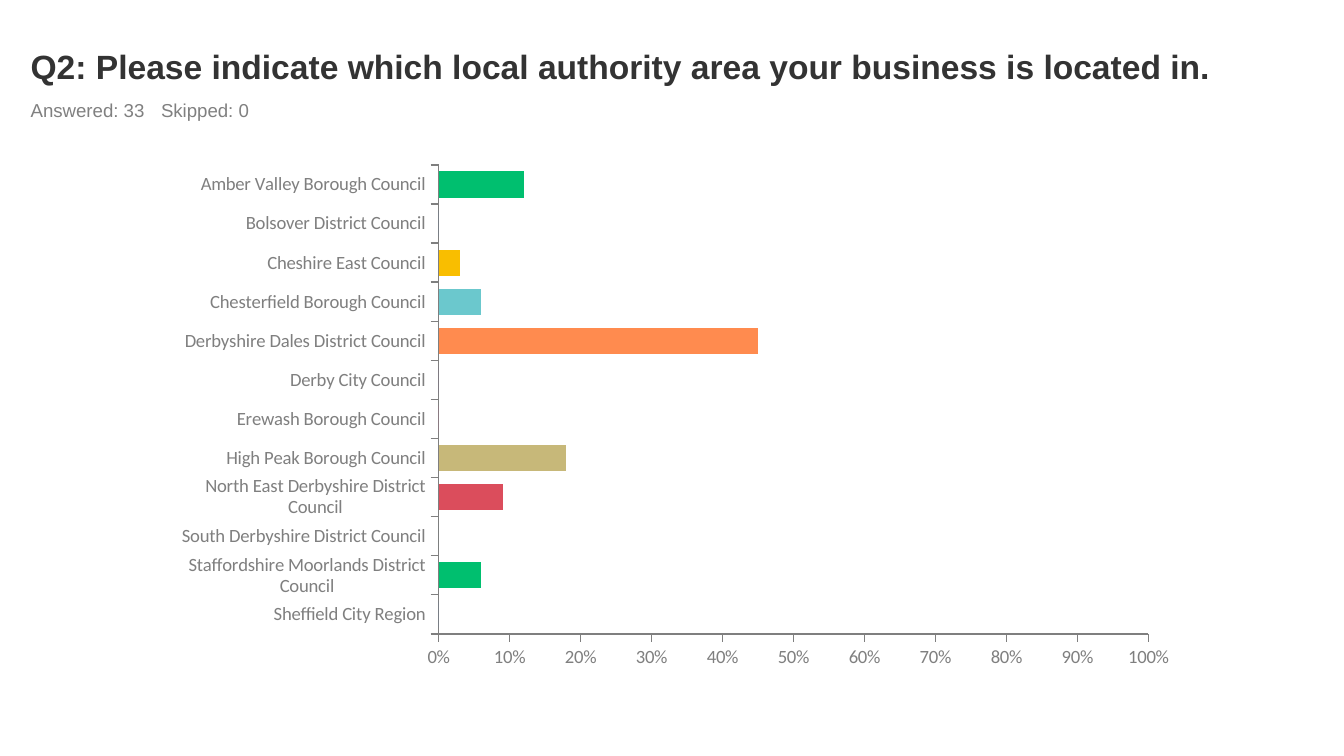
from dataclasses import dataclass
from itertools import cycle

from lxml.etree import SubElement
from pptx import Presentation
from pptx.chart.data import CategoryChartData
from pptx.dml.color import RGBColor
from pptx.enum.chart import XL_CHART_TYPE as ChartType
from pptx.enum.chart import XL_TICK_LABEL_POSITION as LabelPosition
from pptx.enum.chart import XL_TICK_MARK as TickMark
from pptx.enum.text import MSO_ANCHOR as Anchor
from pptx.oxml.ns import qn
from pptx.util import Inches, Pt

WIDTH = Inches(10)
HEIGHT = WIDTH * 9 // 16
DARK, GREY, AXIS_GREY = "333333", "808080", "7F7F7F"
PALETTE = ["00BF6F", "507CB6", "F9BE00", "6BC8CD", "FF8B4F",
           "7D5E90", "D25F90", "C7B879", "DB4D5C", "768086"]
SHARES = {
    "Amber Valley Borough Council": 0.12,
    "Bolsover District Council": 0,
    "Cheshire East Council": 0.03,
    "Chesterfield Borough Council": 0.06,
    "Derbyshire Dales District Council": 0.45,
    "Derby City Council": 0,
    "Erewash Borough Council": 0,
    "High Peak Borough Council": 0.18,
    "North East Derbyshire District Council": 0.09,
    "South Derbyshire District Council": 0,
    "Staffordshire Moorlands District Council": 0.06,
    "Sheffield City Region": 0,
}


@dataclass(frozen=True)
class Box:
    """A rectangle in inches on the slide."""
    left: float
    top: float
    width: float
    height: float

    def lengths(self) -> tuple:
        """Return the four lengths for a new shape."""
        return tuple(Inches(n) for n in (self.left, self.top, self.width, self.height))


@dataclass(frozen=True)
class Heading:
    """A line of text above the chart."""
    text: str
    box: Box
    size: float
    color: str
    bold: bool = False
    anchor: Anchor = Anchor.TOP
    space_before: float = 0
    tab: float = 0


HEADINGS = [
    Heading("Q2: Please indicate which local authority area your business is located in.",
            Box(0.13, 0.09, 9, 0.6), 18, DARK, True, Anchor.BOTTOM),
    Heading("Answered: 33\tSkipped: 0", Box(0.13, 0.69, 9, 0.26), 10, GREY,
            space_before=2, tab=0.97),
]
CHART_BOX = Box(1.2, 1.15, 7.65, 3.9)


def rgb(color: str) -> RGBColor:
    """Turn a hex string into a colour."""
    return RGBColor.from_string(color)


def style_font(font, name: str, size: float, color: str, bold: bool = False) -> None:
    """Set the look of a font."""
    font.name, font.size, font.bold = name, Pt(size), bold
    font.color.rgb = rgb(color)


def add_heading(slide, heading: Heading) -> None:
    """Draw one heading."""
    text_frame = slide.shapes.add_textbox(*heading.box.lengths()).text_frame
    text_frame.word_wrap = True
    text_frame.vertical_anchor = heading.anchor
    text_frame.text = heading.text
    paragraph = text_frame.paragraphs[0]
    paragraph.space_before = Pt(heading.space_before)
    if heading.tab:
        tabs = SubElement(paragraph._p.get_or_add_pPr(), qn("a:tabLst"))
        SubElement(tabs, qn("a:tab"), pos=str(Inches(heading.tab)), algn="l")
    for run in paragraph.runs:
        style_font(run.font, "Arial", heading.size, heading.color, heading.bold)


def style_axis(axis, label_position: LabelPosition) -> None:
    """Give an axis its line, ticks and labels."""
    axis.has_major_gridlines = False
    axis.major_tick_mark = TickMark.OUTSIDE
    axis.minor_tick_mark = TickMark.NONE
    axis.tick_label_position = label_position
    axis.format.line.color.rgb = rgb(AXIS_GREY)
    axis.format.line.width = Pt(0.75)
    style_font(axis.tick_labels.font, "Calibri", 10, AXIS_GREY)


def move_to_last_category(value_axis) -> None:
    """Let the value axis cross after the last category."""
    element = value_axis._element
    element.find(qn("c:axPos")).set("val", "t")
    element.find(qn("c:crosses")).set("val", "max")


def add_share_chart(slide, box: Box, shares: dict[str, float]) -> None:
    """Draw the bar chart of answers by local authority."""
    data = CategoryChartData(number_format="0%")
    data.categories = list(shares)
    data.add_series("Series 1", list(shares.values()))
    chart = slide.shapes.add_chart(ChartType.BAR_CLUSTERED, *box.lengths(), data).chart
    chart.has_legend = False
    chart.has_title = False
    style_font(chart.font, "Calibri", 18, DARK)

    categories, values = chart.category_axis, chart.value_axis
    style_axis(categories, LabelPosition.LOW)
    categories.reverse_order = True
    style_axis(values, LabelPosition.NEXT_TO_AXIS)
    move_to_last_category(values)
    values.minimum_scale, values.maximum_scale, values.major_unit = 0, 1, 0.1
    values.tick_labels.number_format = "0%"
    values.tick_labels.number_format_is_linked = False

    plot = chart.plots[0]
    plot.gap_width, plot.overlap = 50, 100
    plot.vary_by_categories = False
    series = plot.series[0]
    series.invert_if_negative = False
    series.format.fill.solid()
    series.format.fill.fore_color.rgb = rgb(PALETTE[0])
    for index, color in zip(range(len(shares)), cycle(PALETTE)):
        fill = series.points[index].format.fill
        fill.solid()
        fill.fore_color.rgb = rgb(color)


def main() -> None:
    """Build and save the slide."""
    presentation = Presentation()
    presentation.slide_width, presentation.slide_height = WIDTH, HEIGHT
    slide = presentation.slides.add_slide(presentation.slide_layouts[6])
    for heading in HEADINGS:
        add_heading(slide, heading)
    add_share_chart(slide, CHART_BOX, SHARES)
    presentation.save("out.pptx")


if __name__ == "__main__":
    main()
